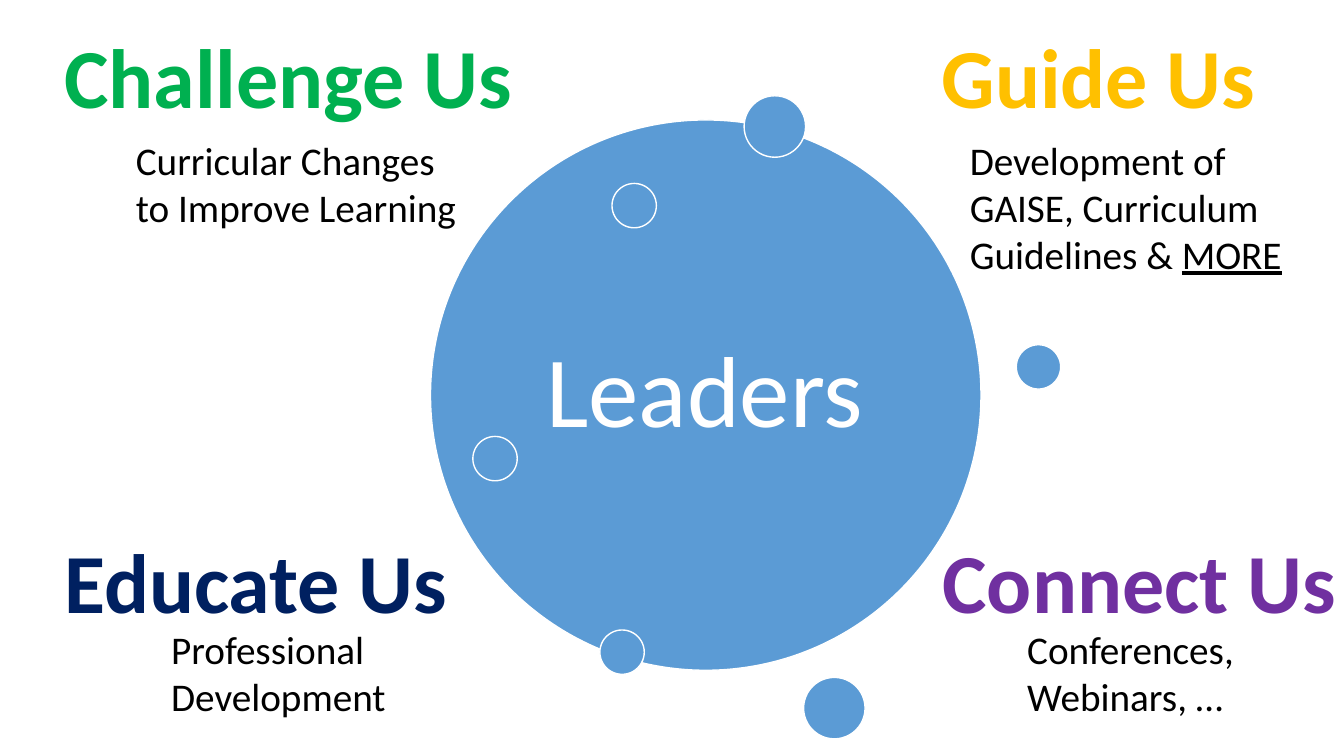
"""Build the Leaders slide: a central circle, its satellites and four captioned themes."""
from pptx import Presentation
from pptx.dml.color import RGBColor
from pptx.enum.shapes import MSO_SHAPE
from pptx.enum.text import MSO_ANCHOR, MSO_AUTO_SIZE, PP_ALIGN
from pptx.util import Inches, Pt

COLORS = {
    "blue": "5B9BD5",
    "white": "FFFFFF",
    "black": "000000",
    "green": "00B050",
    "gold": "FFC000",
    "navy": "002060",
    "purple": "7030A0",
}


def add_circle(left, top, diameter):
    shape = slide.shapes.add_shape(
        MSO_SHAPE.OVAL, Inches(left), Inches(top), Inches(diameter), Inches(diameter))
    shape.shadow.inherit = False
    shape.fill.solid()
    shape.fill.fore_color.rgb = RGBColor.from_string(COLORS["blue"])
    shape.line.color.rgb = RGBColor.from_string(COLORS["white"])
    shape.line.width = Pt(1)


def add_text(box, lines, size, color, bold=None):
    shape = slide.shapes.add_textbox(*[Inches(length) for length in box])
    text_frame = shape.text_frame
    text_frame.word_wrap = True
    text_frame.auto_size = MSO_AUTO_SIZE.SHAPE_TO_FIT_TEXT
    text_frame.text = lines
    for paragraph in text_frame.paragraphs:
        font = paragraph.runs[0].font
        font.name = "Calibri"
        font.size = Pt(size)
        font.bold = bold
        font.color.rgb = RGBColor.from_string(COLORS[color])
    return text_frame


presentation = Presentation()
presentation.slide_width = Inches(13.33)
presentation.slide_height = Inches(7.5)
slide = presentation.slides.add_slide(presentation.slide_layouts[6])

add_circle(4.27, 1.19, 5.46)

center = add_text((5.06, 1.99, 3.86, 3.86), "Leaders", 72, "white")
center.auto_size = MSO_AUTO_SIZE.NONE
center.vertical_anchor = MSO_ANCHOR.MIDDLE
center.margin_left = center.margin_right = Inches(0.3)
center.margin_top = center.margin_bottom = Inches(0.3)
center.paragraphs[0].alignment = PP_ALIGN.CENTER
center.paragraphs[0].line_spacing = 0.9

LARGE, SMALL = 0.61, 0.44
satellites = [
    (7.38, 0.95, LARGE),
    (5.95, 6.25, SMALL),
    (10.08, 3.42, SMALL),
    (7.97, 6.72, LARGE),
    (6.07, 1.82, SMALL),
    (4.69, 4.33, SMALL),
]
for left, top, diameter in satellites:
    add_circle(left, top, diameter)

themes = [
    ("Challenge Us", "green", (0.54, 0.19, 5.6, 1.11),
     "Curricular Changes to Improve Learning", (1.25, 1.3, 3.46, 1.04), ""),
    ("Guide Us", "gold", (9.24, 0.19, 3.73, 1.11),
     "Development of GAISE, Curriculum Guidelines & ", (9.52, 1.3, 3.59, 1.51), "MORE"),
    ("Educate Us", "navy", (0.54, 5.2, 5.6, 1.11),
     "Professional Development", (1.6, 6.15, 3.46, 1.04), ""),
    ("Connect Us", "purple", (9.25, 5.2, 5.6, 1.11),
     "Conferences,\nWebinars, …", (10.09, 6.15, 3.46, 1.04), ""),
]
for title, color, title_box, detail, detail_box, underlined in themes:
    add_text(title_box, title, 60, color, bold=True)
    detail_frame = add_text(detail_box, detail, 28, "black")
    if underlined:
        run = detail_frame.paragraphs[0].add_run()
        run.text = underlined
        run.font.name = "Calibri"
        run.font.size = Pt(28)
        run.font.underline = True
        run.font.color.rgb = RGBColor.from_string(COLORS["black"])

presentation.save("out.pptx")
